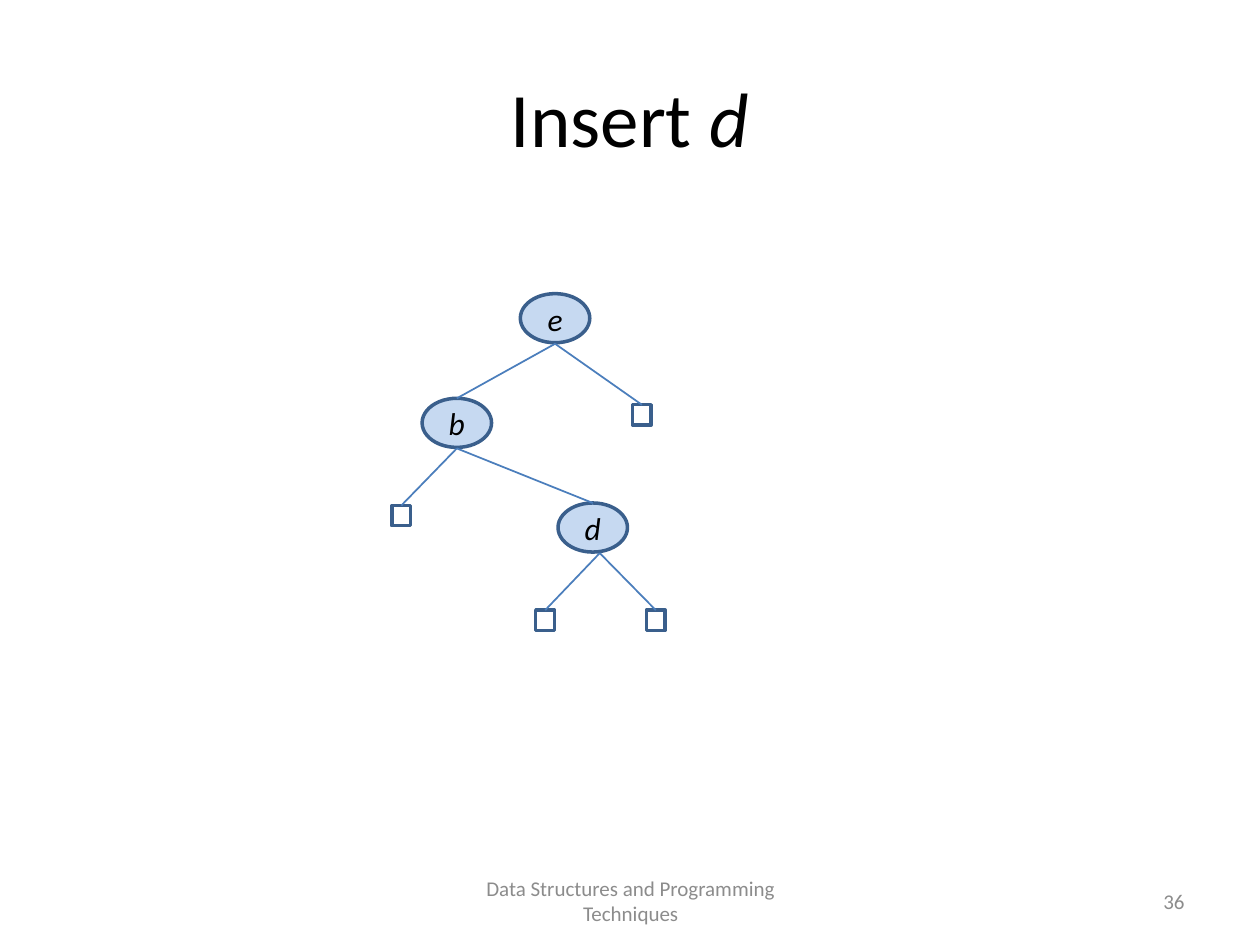
from dataclasses import dataclass

from lxml import etree
from pptx import Presentation
from pptx.dml.color import RGBColor
from pptx.enum.shapes import MSO_CONNECTOR, MSO_SHAPE
from pptx.enum.text import MSO_ANCHOR, PP_ALIGN
from pptx.oxml.ns import qn
from pptx.util import Cm, Pt

OVAL, RECT = MSO_SHAPE.OVAL, MSO_SHAPE.RECTANGLE
STRAIGHT = MSO_CONNECTOR.STRAIGHT
TOP, MIDDLE = MSO_ANCHOR.TOP, MSO_ANCHOR.MIDDLE
CENTER, RIGHT = PP_ALIGN.CENTER, PP_ALIGN.RIGHT
TOP_SITE = 0


@dataclass(frozen=True)
class Theme:
    font: str = "Calibri"
    ink: RGBColor = RGBColor(0x00, 0x00, 0x00)
    muted: RGBColor = RGBColor(0x8C, 0x8C, 0x8C)
    node_fill: RGBColor = RGBColor(0xC6, 0xD9, 0xF1)
    outline: RGBColor = RGBColor(0x3A, 0x5F, 0x8C)
    edge: RGBColor = RGBColor(0x4B, 0x7E, 0xBC)
    title_size: int = 44
    label_size: int = 18
    footer_size: int = 12


THEME = Theme()
NODE_W, NODE_H, LABEL_H = 1.4, 0.99, 1.02
LEAF_W, LEAF_H = 0.38, 0.41
LEVEL = 2.11
EDGE_GAP = 0.04


def add_text(slide, box, runs, size, color, align=CENTER, anchor=MIDDLE):
    tf = slide.shapes.add_textbox(*map(Cm, box)).text_frame
    tf.word_wrap = True
    tf.vertical_anchor = anchor
    p = tf.paragraphs[0]
    p.alignment = align
    for text, italic in runs:
        r = p.add_run()
        r.text = text
        r.font.name = THEME.font
        r.font.size = Pt(size)
        r.font.italic = italic
        r.font.color.rgb = color


def add_outlined(slide, kind, box):
    sp = slide.shapes.add_shape(kind, *map(Cm, box))
    sp.shadow.inherit = False
    sp.line.color.rgb = THEME.outline
    sp.line.width = Pt(2)
    return sp


def add_node(slide, x, y, label):
    sp = add_outlined(slide, OVAL, (x, y, NODE_W, NODE_H))
    sp.fill.solid()
    sp.fill.fore_color.rgb = THEME.node_fill
    add_text(slide, (x, y, NODE_W, LABEL_H), [(label, True)],
             THEME.label_size, THEME.ink, anchor=TOP)


def add_edge(slide, start, end):
    line = slide.shapes.add_connector(STRAIGHT, *map(Cm, (*start, *end)))
    line.line.color.rgb = THEME.edge
    line.line.width = Pt(1)
    etree.SubElement(line._element.spPr, qn("a:effectLst"))
    return line


def add_leaf(slide, x, y, start):
    sp = add_outlined(slide, RECT, (x, y, LEAF_W, LEAF_H))
    sp.fill.background()
    line = add_edge(slide, start, (x + LEAF_W / 2, y))
    line.end_connect(sp, TOP_SITE)


def add_title(slide, box):
    add_text(slide, box, [("Insert ", False), ("d", True)],
             THEME.title_size, THEME.ink)


def add_tree(slide, left, top):
    nodes = {"e": (left + 2.59, top),
             "b": (left + 0.61, top + LEVEL),
             "d": (left + 3.35, top + 2 * LEVEL)}
    tail_shift = {"e": 0, "b": 0, "d": 0.14}
    tails = {name: (x + NODE_W / 2 + tail_shift[name], y + NODE_H + EDGE_GAP / 2)
             for name, (x, y) in nodes.items()}
    leaves = [("e", 4.85, 2.24), ("b", 0, 4.27),
              ("d", 2.9, 6.38), ("d", 5.13, 6.38)]

    for name, (x, y) in nodes.items():
        add_node(slide, x, y, name)
    for parent, child in ("eb", "bd"):
        x, y = nodes[child]
        add_edge(slide, tails[parent], (x + NODE_W / 2, y))
    for parent, x, y in leaves:
        add_leaf(slide, left + x, top + y, tails[parent])


def add_footer(slide, top, height):
    add_text(slide, (8.69, top, 8.05, height),
             [("Data Structures and Programming Techniques", False)],
             THEME.footer_size, THEME.muted)
    add_text(slide, (18.21, top, 5.92, height), [("36", False)],
             THEME.footer_size, THEME.muted, align=RIGHT)


def main():
    prs = Presentation()
    prs.slide_width, prs.slide_height = Cm(25.4), Cm(19.05)
    s = prs.slides.add_slide(prs.slide_layouts[6])
    add_title(s, (1.27, 0.76, 22.86, 3.18))
    add_tree(s, 7.9, 5.92)
    add_footer(s, 17.65, 1.02)
    prs.save("out.pptx")


if __name__ == "__main__":
    main()
